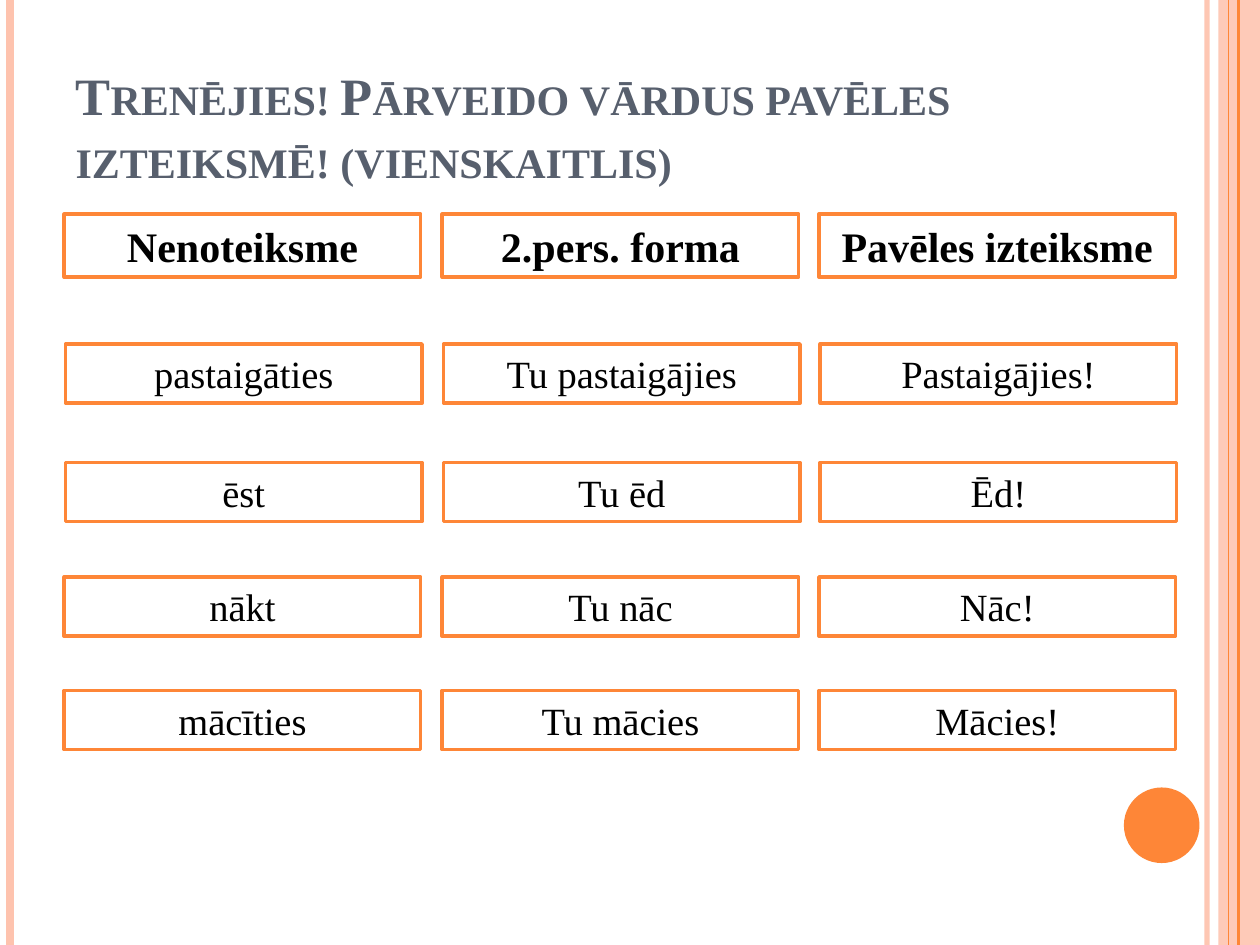
from pptx import Presentation
from pptx.dml.color import RGBColor
from pptx.enum.shapes import MSO_CONNECTOR, MSO_SHAPE
from pptx.enum.text import MSO_ANCHOR, MSO_AUTO_SIZE, PP_ALIGN
from pptx.oxml.ns import qn
from pptx.util import Inches, Pt
from lxml import etree

RECT, OVAL = MSO_SHAPE.RECTANGLE, MSO_SHAPE.OVAL
STRAIGHT = MSO_CONNECTOR.STRAIGHT
LEFT, CENTER = PP_ALIGN.LEFT, PP_ALIGN.CENTER
FONT = "Times New Roman"
COLORS = {"orange": "FE8637", "peach": "FEC3AE", "title": "575F6D",
          "text": "000000", "white": "FFFFFF"}


def paint(fill, color, alpha=100):
    fill.solid()
    fill.fore_color.rgb = RGBColor.from_string(COLORS[color])
    if alpha < 100:
        clr = next(fill._xPr.iter(qn("a:srgbClr")))
        etree.SubElement(clr, qn("a:alpha")).set("val", str(alpha * 1000))


def add_box(kind, x, y, w, h, color, alpha=100):
    sp = s.shapes.add_shape(kind, Inches(x), Inches(y), Inches(w), Inches(h))
    sp.shadow.inherit = False
    paint(sp.fill, color, alpha)
    sp.line.fill.background()
    return sp


prs = Presentation()
prs.slide_width, prs.slide_height = Inches(10), Inches(7.5)
s = prs.slides.add_slide(prs.slide_layouts[5])

# Side decoration: band, vertical stripes and circle
add_box(RECT, 9.67, 0, 0.33, 7.5, "peach", 87)
stripes = [(9.58, "peach", 3, 93), (0.08, "peach", 4.5, 100),
           (9.83, "orange", 1.5, 100), (9.75, "orange", 0.75, 100)]
for x, color, width, alpha in stripes:
    ln = s.shapes.add_connector(STRAIGHT, Inches(x), 0, Inches(x), Inches(7.5))
    ln.line.width = Pt(width)
    paint(ln.line.fill, color, alpha)
    etree.SubElement(ln._element.spPr, qn("a:effectLst"))
add_box(OVAL, 8.92, 6.25, 0.6, 0.6, "orange")

# Title
title = s.shapes.title
title.left, title.top = Inches(0.5), Inches(0.3)
title.width, title.height = Inches(8.17), Inches(1.25)
tf = title.text_frame
tf.auto_size = MSO_AUTO_SIZE.NONE
tf.vertical_anchor = MSO_ANCHOR.BOTTOM
p = tf.paragraphs[0]
p.alignment = LEFT
p.font.name, p.font.size, p.font.bold = FONT, Pt(30), True
p.font.color.rgb = RGBColor.from_string(COLORS["title"])
r = p.add_run()
r.text = "Trenējies! Pārveido vārdus pavēles izteiksmē! (vienskaitlis)"
r._r.get_or_add_rPr().set("cap", "small")

# Grid of verb forms: left edge, top, height, size, bold, words
rows = [
    (0.51, 1.7, 0.5, 24, True, ["Nenoteiksme", "2.pers. forma", "Pavēles izteiksme"]),
    (0.52, 2.73, 0.47, 22, False, ["pastaigāties", "Tu pastaigājies", "Pastaigājies!"]),
    (0.52, 3.67, 0.47, 22, False, ["ēst", "Tu ēd", "Ēd!"]),
    (0.51, 4.58, 0.47, 22, False, ["nākt", "Tu nāc", "Nāc!"]),
    (0.51, 5.48, 0.47, 22, False, ["mācīties", "Tu mācies", "Mācies!"]),
]
for left, top, height, size, bold, words in rows:
    for offset, word in zip((0, 3, 5.99), words):
        sp = add_box(RECT, left + offset, top, 2.83, height, "white")
        paint(sp.line.fill, "orange")
        sp.line.width = Pt(2)
        tf = sp.text_frame
        tf.word_wrap = True
        tf.auto_size = MSO_AUTO_SIZE.SHAPE_TO_FIT_TEXT
        tf.vertical_anchor = MSO_ANCHOR.TOP
        p = tf.paragraphs[0]
        p.text = word
        p.alignment = CENTER
        p.font.name, p.font.size, p.font.bold = FONT, Pt(size), bold
        p.font.color.rgb = RGBColor.from_string(COLORS["text"])

prs.save("out.pptx")
